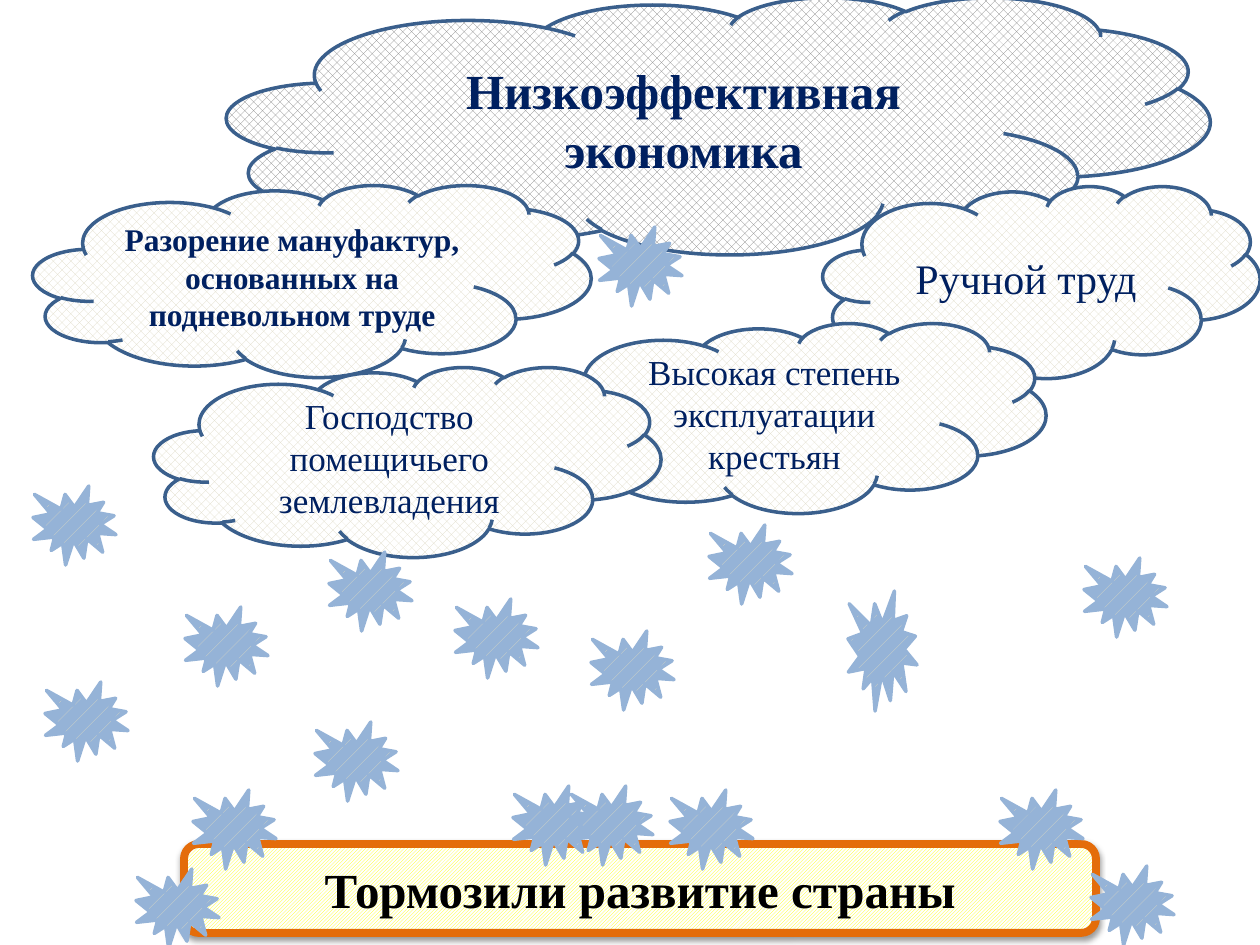
from lxml.etree import SubElement
from pptx import Presentation
from pptx.dml.color import RGBColor
from pptx.enum.dml import MSO_PATTERN as Pattern
from pptx.enum.shapes import MSO_SHAPE as Shape
from pptx.enum.text import MSO_ANCHOR, PP_ALIGN
from pptx.oxml.ns import qn
from pptx.util import Pt

PX = 914400 / 126
FONT = "Times New Roman"

WHITE = RGBColor(0xFF, 0xFF, 0xFF)
BLACK = RGBColor(0x00, 0x00, 0x00)
NAVY = RGBColor(0x00, 0x20, 0x60)
STEEL = RGBColor(0x3A, 0x5F, 0x8C)
GRAY = RGBColor(0x80, 0x80, 0x80)
SAND = RGBColor(0xDD, 0xD9, 0xC3)
YELLOW = RGBColor(0xFF, 0xFF, 0x00)
ORANGE = RGBColor(0xE4, 0x6C, 0x0A)
SKY = RGBColor(0x95, 0xB3, 0xD7)

# Clouds, back to front: paragraphs, box in px, text size, bold, pattern colour
CLOUDS = [
    (["Низкоэффективная", "экономика"], (227, -3, 983, 257), 28, True, GRAY),
    (["Ручной труд"], (823, 186, 437, 192), 24, False, SAND),
    (["Высокая степень эксплуатации крестьян"], (539, 323, 507, 190), 20, False, SAND),
    (["Разорение мануфактур, основанных на подневольном труде"],
     (33, 185, 558, 192), 18, True, SAND),
    (["Господство помещичьего землевладения"], (154, 367, 507, 190), 20, False, SAND),
]

RESULT = ["Тормозили развитие страны"]
RESULT_BOX = (184, 844, 912, 89)

# Sparks: left and top in px, all of one size but the tall one
SPARK_SIZE = (83, 79)
TALL_SPARK = (848, 591, 69, 120)
SPARKS = [
    (591, 631), (185, 607), (709, 525), (599, 227), (329, 552), (455, 599),
    (193, 790), (1000, 790), (513, 786), (670, 790), (570, 786), (1084, 558),
    (33, 486), (1091, 866), (136, 869), (45, 682), (315, 722),
]

prs = Presentation()
prs.slide_width, prs.slide_height = round(1260 * PX), round(945 * PX)
slide = prs.slides.add_slide(prs.slide_layouts[6])


def add_patterned(kind, box, pattern, fore, back, line, width=2):
    shape = slide.shapes.add_shape(kind, *(round(v * PX) for v in box))
    shape.shadow.inherit = False
    shape.fill.patterned()
    shape.fill.pattern = pattern
    shape.fill.fore_color.rgb = fore
    shape.fill.back_color.rgb = back
    shape.line.color.rgb = line
    shape.line.width = Pt(width)
    return shape


def write(shape, paragraphs, size, color=NAVY, bold=False):
    frame = shape.text_frame
    frame.word_wrap = True
    frame.vertical_anchor = MSO_ANCHOR.MIDDLE
    frame.text = "\n".join(paragraphs)
    for paragraph in frame.paragraphs:
        paragraph.alignment = PP_ALIGN.CENTER
        font = paragraph.runs[0].font
        font.name, font.size, font.bold = FONT, Pt(size), bold
        font.color.rgb = color


def add_shadow(shape):
    effects = shape._element.spPr.find(qn("a:effectLst"))
    shadow = SubElement(effects, qn("a:outerShdw"), blurRad="40000", dist="20000",
                        dir="5400000", rotWithShape="0")
    tint = SubElement(shadow, qn("a:srgbClr"), val=str(BLACK))
    SubElement(tint, qn("a:alpha"), val="38000")


# Causes
for paragraphs, box, size, bold, fore in CLOUDS:
    cloud = add_patterned(Shape.CLOUD, box, Pattern.PERCENT_50, fore, WHITE, STEEL)
    write(cloud, paragraphs, size, bold=bold)

# Result
result = add_patterned(Shape.ROUNDED_RECTANGLE, RESULT_BOX,
                       Pattern.LIGHT_UPWARD_DIAGONAL, YELLOW, WHITE, ORANGE, 4.5)
add_shadow(result)
write(result, RESULT, 28, BLACK, bold=True)

# Sparks
for box in [TALL_SPARK] + [corner + SPARK_SIZE for corner in SPARKS]:
    add_patterned(Shape.EXPLOSION1, box, Pattern.PERCENT_5, SAND, SKY, SKY)

prs.save("out.pptx")
